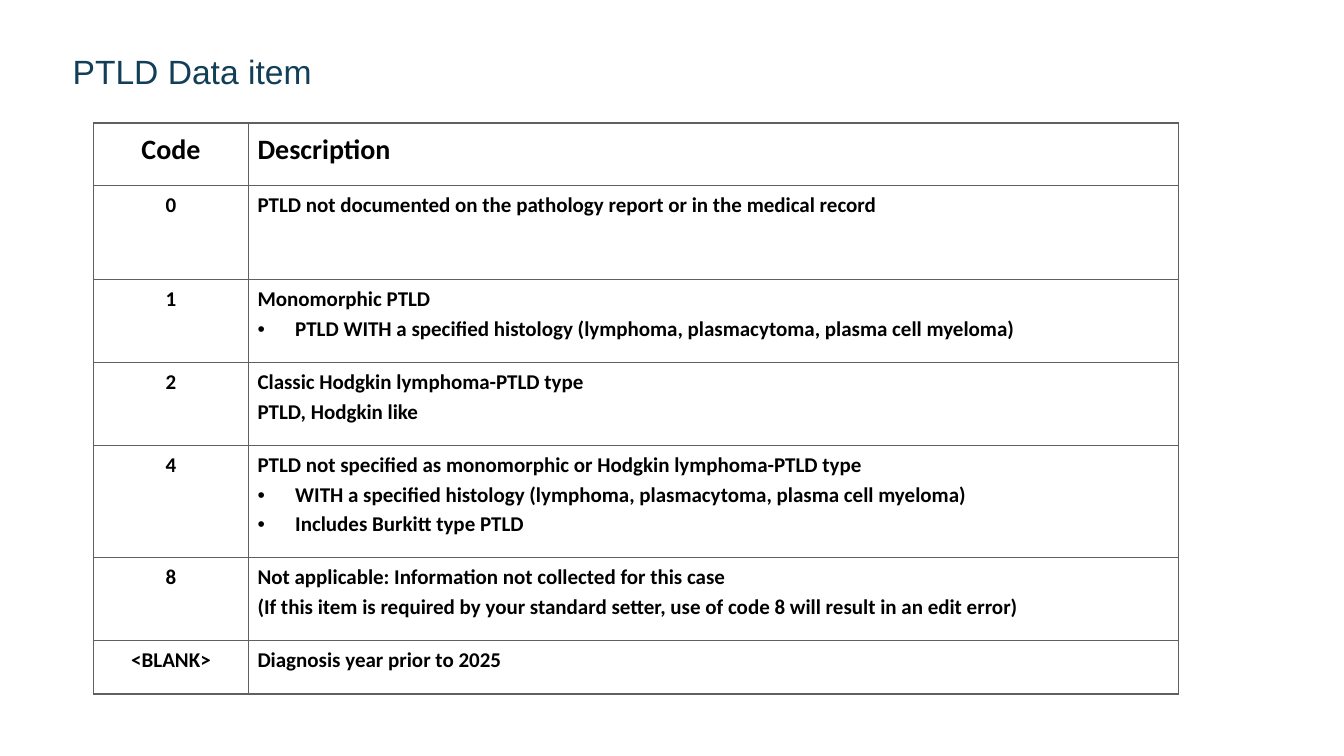
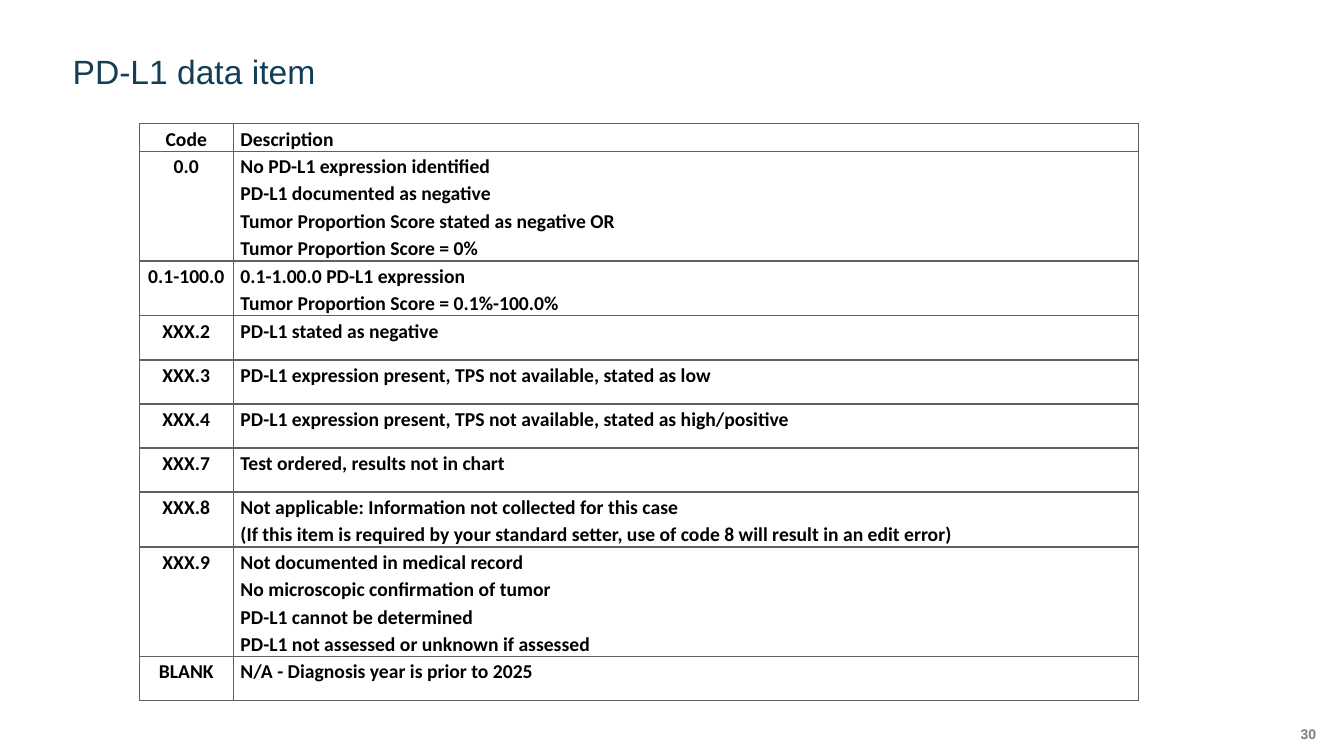
from dataclasses import dataclass

from lxml.etree import SubElement
from pptx import Presentation
from pptx.dml.color import RGBColor
from pptx.enum.text import MSO_ANCHOR as Anchor, PP_ALIGN as Align
from pptx.oxml import parse_xml
from pptx.oxml.ns import nsdecls, qn
from pptx.util import Cm, Pt


@dataclass(frozen=True)
class Theme:
    title_color: str = "123E57"
    text_color: str = "000000"
    number_color: str = "7F7F7F"
    border_color: str = "606060"
    cell_color: str = "FFFFFF"
    title_font: str = "Arial"
    table_font: str = "Calibri"
    title_size: int = 24
    number_size: int = 10
    table_line_spacing: float = 1.15


@dataclass(frozen=True)
class TableStyle:
    """Type sizes in points; margins (left, top, right, bottom) in centimetres."""
    header_size: int
    body_size: int
    margins: tuple
    header_anchor: Anchor


THEME = Theme()
ROOMY = TableStyle(20, 15, (0.23, 0.08, 0.23, 0.48), Anchor.BOTTOM)
COMPACT = TableStyle(14, 14, (0.18, 0, 0.18, 0), Anchor.TOP)
TITLE_BOX = (1.83, 1.14, 30.25, 1.17)
NUMBER_BOX = (32.03, 18.29, 1.14, 0.51)
BULLET = "• "
BULLET_INDENT = Cm(0.95)

NOT_COLLECTED = (
    "Not applicable: Information not collected for this case",
    "(If this item is required by your standard setter, "
    "use of code 8 will result in an edit error)",
)

# Each row: height in centimetres, code, description lines
PTLD_ROWS = [
    (1.58, "Code", ["Description"]),
    (2.37, "0", ["PTLD not documented on the pathology report or in the medical record"]),
    (2.09, "1", [
        "Monomorphic PTLD",
        "• PTLD WITH a specified histology (lymphoma, plasmacytoma, plasma cell myeloma)",
    ]),
    (2.09, "2", ["Classic Hodgkin lymphoma-PTLD type", "PTLD, Hodgkin like"]),
    (2.82, "4", [
        "PTLD not specified as monomorphic or Hodgkin lymphoma-PTLD type",
        "• WITH a specified histology (lymphoma, plasmacytoma, plasma cell myeloma)",
        "• Includes Burkitt type PTLD",
    ]),
    (2.09, "8", NOT_COLLECTED),
    (1.35, "<BLANK>", ["Diagnosis year prior to 2025"]),
]

PD_L1_ROWS = [
    (0.53, "Code", ["Description"]),
    (2.26, "0.0", [
        "No PD-L1 expression identified",
        "PD-L1 documented as negative",
        "Tumor Proportion Score stated as negative OR",
        "Tumor Proportion Score = 0%",
    ]),
    (1.11, "0.1-100.0", [
        "0.1-1.00.0 PD-L1 expression",
        "Tumor Proportion Score = 0.1%-100.0%",
    ]),
    (1.11, "XXX.2", ["PD-L1 stated as negative"]),
    (1.11, "XXX.3", ["PD-L1 expression present, TPS not available, stated as low"]),
    (1.11, "XXX.4", ["PD-L1 expression present, TPS not available, stated as high/positive"]),
    (1.11, "XXX.7", ["Test ordered, results not in chart"]),
    (1.11, "XXX.8", NOT_COLLECTED),
    (2.26, "XXX.9", [
        "Not documented in medical record",
        "No microscopic confirmation of tumor",
        "PD-L1 cannot be determined",
        "PD-L1 not assessed or unknown if assessed",
    ]),
    (1.11, "BLANK", ["N/A - Diagnosis year is prior to 2025"]),
]


def set_margins(target, margins):
    """Set the insets of a text frame or table cell."""
    (target.margin_left, target.margin_top,
     target.margin_right, target.margin_bottom) = map(Cm, margins)


def format_paragraph(paragraph, font, size, color, bold=False,
                     align=Align.LEFT, line_spacing=1.0):
    paragraph.alignment = align
    paragraph.line_spacing = line_spacing
    for run in paragraph.runs:
        run.font.name = font
        run.font.size = Pt(size)
        run.font.bold = bold
        run.font.color.rgb = RGBColor.from_string(color)


def add_bullet(paragraph):
    properties = paragraph._p.get_or_add_pPr()
    properties.set("marL", str(BULLET_INDENT))
    properties.set("indent", str(-BULLET_INDENT))
    SubElement(properties, qn("a:buFont")).set("typeface", "Arial")
    SubElement(properties, qn("a:buChar")).set("char", BULLET.strip())


def add_borders(cell):
    properties = cell._tc.get_or_add_tcPr()
    for index, side in enumerate("LRTB"):
        properties.insert(index, parse_xml(
            f'<a:ln{side} {nsdecls("a")} w="{Pt(1)}"><a:solidFill>'
            f'<a:srgbClr val="{THEME.border_color}"/></a:solidFill></a:ln{side}>'))


def fill_cell(cell, lines, style, is_header, align):
    set_margins(cell, style.margins)
    cell.vertical_anchor = style.header_anchor if is_header else Anchor.TOP
    cell.fill.solid()
    cell.fill.fore_color.rgb = RGBColor.from_string(THEME.cell_color)
    add_borders(cell)
    cell.text_frame.text = "\n".join(line.removeprefix(BULLET) for line in lines)
    size = style.header_size if is_header else style.body_size
    for line, paragraph in zip(lines, cell.text_frame.paragraphs):
        format_paragraph(paragraph, THEME.table_font, size, THEME.text_color, True,
                         align, THEME.table_line_spacing)
        if line.startswith(BULLET):
            add_bullet(paragraph)


def add_code_table(slide, left, top, column_widths, rows, style):
    height = sum(row[0] for row in rows)
    table = slide.shapes.add_table(
        len(rows), len(column_widths), Cm(left), Cm(top),
        Cm(sum(column_widths)), Cm(height)).table
    table.horz_banding = False
    for column, width in zip(table.columns, column_widths):
        column.width = Cm(width)
    for index, (row_height, code, description) in enumerate(rows):
        table.rows[index].height = Cm(row_height)
        fill_cell(table.cell(index, 0), [code], style, index == 0, Align.CENTER)
        fill_cell(table.cell(index, 1), description, style, index == 0, Align.LEFT)


def place_title(slide, text):
    title = slide.shapes.title
    title.left, title.top, title.width, title.height = map(Cm, TITLE_BOX)
    frame = title.text_frame
    frame.text = text
    frame.vertical_anchor = Anchor.BOTTOM
    set_margins(frame, (0, 0, 0, 0))
    format_paragraph(frame.paragraphs[0], THEME.title_font, THEME.title_size,
                     THEME.title_color, line_spacing=0.9)


def add_slide_number(slide, number):
    frame = slide.shapes.add_textbox(*map(Cm, NUMBER_BOX)).text_frame
    frame.word_wrap = True
    set_margins(frame, (0, 0, 0, 0))
    frame.text = str(number)
    format_paragraph(frame.paragraphs[0], THEME.title_font, THEME.number_size,
                     THEME.number_color, True, Align.RIGHT)


def add_code_slide(presentation, title, left, top, column_widths, rows, style,
                   number=None):
    slide = presentation.slides.add_slide(presentation.slide_layouts[5])
    place_title(slide, title)
    add_code_table(slide, left, top, column_widths, rows, style)
    if number is not None:
        add_slide_number(slide, number)


def main():
    presentation = Presentation()
    presentation.slide_width, presentation.slide_height = Cm(33.87), Cm(19.05)
    add_code_slide(presentation, "PTLD Data item", 2.36, 3.1, (3.9, 23.43),
                   PTLD_ROWS, ROOMY)
    add_code_slide(presentation, "PD-L1 data item", 3.51, 3.12, (2.37, 22.81),
                   PD_L1_ROWS, COMPACT, number=30)
    presentation.save("out.pptx")


if __name__ == "__main__":
    main()
